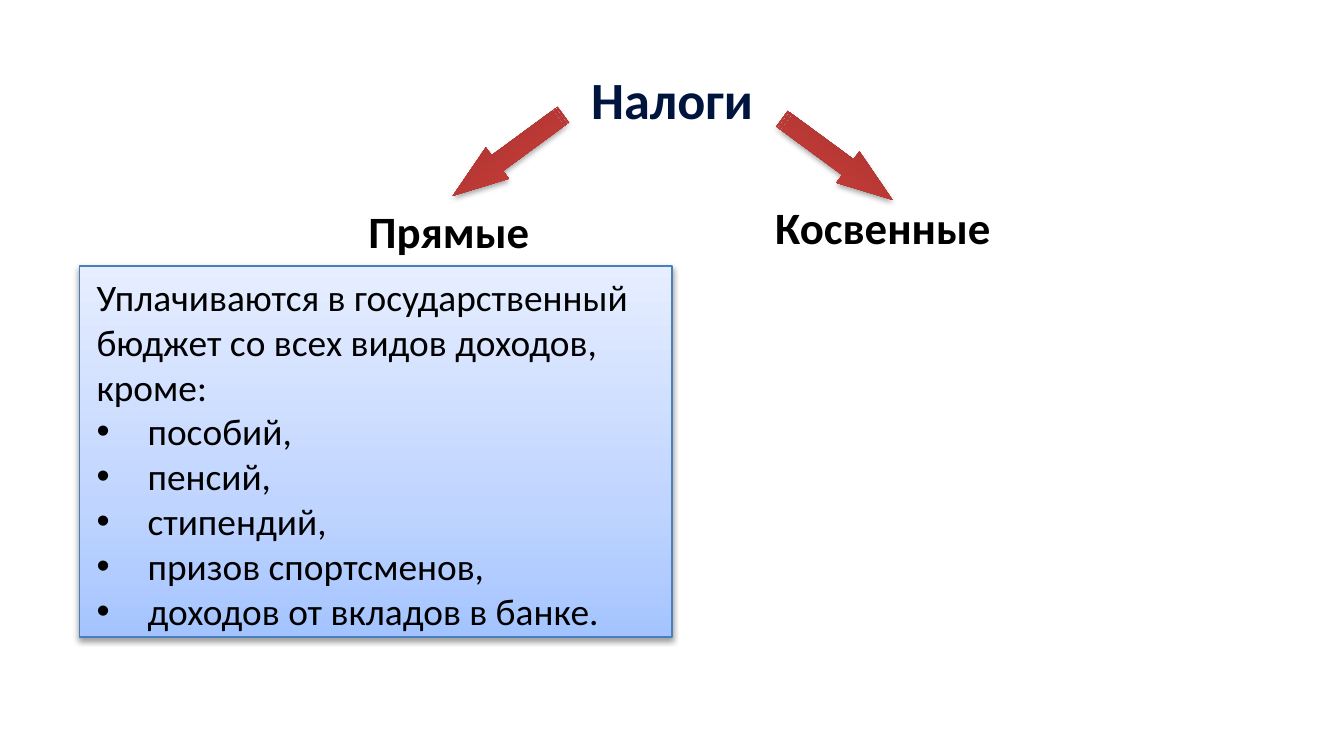
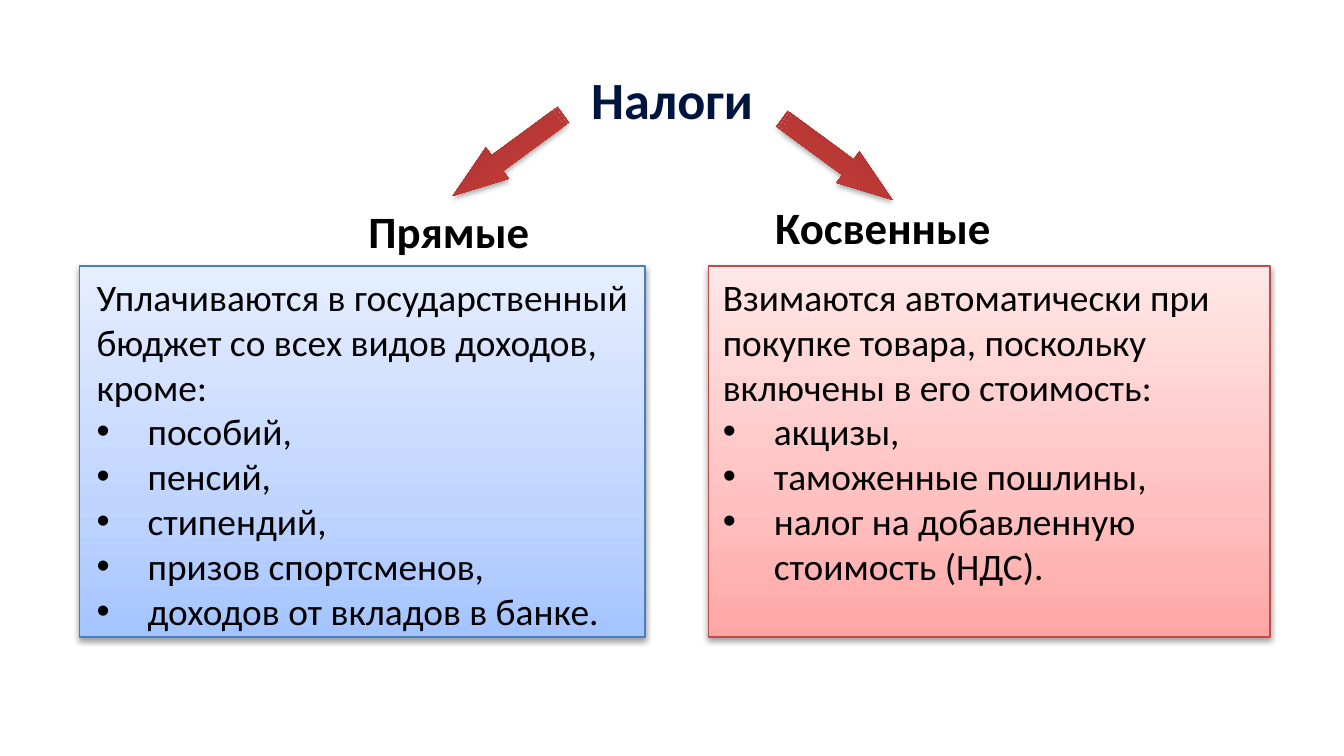
from lxml.etree import SubElement
from pptx import Presentation
from pptx.dml.color import RGBColor
from pptx.enum.shapes import MSO_SHAPE as Shape
from pptx.enum.text import MSO_AUTO_SIZE as AutoSize, PP_ALIGN as Align
from pptx.oxml.ns import qn
from pptx.util import Inches, Pt

COLORS = {
    "title": "00153E",
    "text": "000000",
    "shadow": "000000",
    "direct_line": "4B7EBC",
    "indirect_line": "BF4C48",
}
# Gradient stops run from bottom to top: percent, colour
GRADIENTS = {
    "arrow": [(0, "9C2F2D"), (80, "CB3E3A"), (100, "CE3B37")],
    "direct": [(0, "A4C4FF"), (35, "BFD4FF"), (100, "E6EEFF")],
    "indirect": [(0, "FFA6A5"), (35, "FFC0BF"), (100, "FFE7E7")],
}
FORMATS = {
    "title": {"name": "Calibri", "size": Pt(28), "bold": True},
    "heading": {"name": "Calibri", "size": Pt(24), "bold": True},
    "body": {"name": "Calibri", "size": Pt(20), "bold": False},
}
BULLET_INDENT = Inches(0.38)
PANEL_TOP, PANEL_HEIGHT = 1.98, 2.76

DIRECT_INTRO = ["Уплачиваются в государственный бюджет со всех видов доходов,", "кроме:"]
DIRECT_ITEMS = ["пособий,", "пенсий,", "стипендий,", "призов спортсменов,",
                "доходов от вкладов в банке."]
INDIRECT_INTRO = ["Взимаются автоматически при покупке товара, "
                  "поскольку включены в его стоимость:"]
INDIRECT_ITEMS = ["акцизы,", "таможенные пошлины,", "налог на добавленную стоимость (НДС)."]


def inches(*lengths):
    return [Inches(length) for length in lengths]


def add_color(parent, value):
    return SubElement(parent, qn("a:srgbClr"), val=value)


def fill_gradient(shape, stops):
    shape.fill.gradient()
    shape.fill.gradient_angle = 90
    stop_list = shape.element.spPr.find(qn("a:gradFill")).find(qn("a:gsLst"))
    for stop in list(stop_list):
        stop_list.remove(stop)
    for percent, value in stops:
        add_color(SubElement(stop_list, qn("a:gs"), pos=str(percent * 1000)), value)


def drop_shadow(shape, opacity, distance):
    shape.shadow.inherit = False
    effects = shape.element.spPr.find(qn("a:effectLst"))
    shadow = SubElement(effects, qn("a:outerShdw"), blurRad=str(Pt(3.1)),
                        dist=str(Pt(distance)), dir="5400000", rotWithShape="0")
    SubElement(add_color(shadow, COLORS["shadow"]), qn("a:alpha"), val=str(opacity * 1000))


def add_bullet(paragraph):
    properties = paragraph._p.get_or_add_pPr()
    properties.set("marL", str(BULLET_INDENT))
    properties.set("indent", str(-BULLET_INDENT))
    SubElement(properties, qn("a:buFont"), typeface="Arial")
    SubElement(properties, qn("a:buChar"), char="•")


def add_text(slide, box, lines, style, color="text", align=Align.CENTER, items=()):
    frame = slide.shapes.add_textbox(*inches(*box)).text_frame
    frame.word_wrap = True
    frame.auto_size = AutoSize.SHAPE_TO_FIT_TEXT
    for index, line in enumerate([*lines, *items]):
        paragraph = frame.add_paragraph() if index else frame.paragraphs[0]
        paragraph.alignment = align
        if index >= len(lines):
            add_bullet(paragraph)
        run = paragraph.add_run()
        run.text = line
        for name, value in FORMATS[style].items():
            setattr(run.font, name, value)
        run.font.color.rgb = RGBColor.from_string(COLORS[color])


def add_arrow(slide, left, top, rotation, mirrored=False):
    arrow = slide.shapes.add_shape(Shape.STRIPED_RIGHT_ARROW, *inches(left, top, 1.02, 0.29))
    arrow.adjustments[0], arrow.adjustments[1] = 0.5, 1.42
    arrow.rotation = rotation
    if mirrored:
        arrow.element.spPr.xfrm.set("flipH", "1")
    fill_gradient(arrow, GRADIENTS["arrow"])
    arrow.line.fill.background()
    drop_shadow(arrow, 35, 1.8)


def add_panel(slide, kind, left, width, text_box, intro, items):
    panel = slide.shapes.add_shape(
        Shape.RECTANGLE, *inches(left, PANEL_TOP, width, PANEL_HEIGHT))
    fill_gradient(panel, GRADIENTS[kind])
    panel.line.color.rgb = RGBColor.from_string(COLORS[kind + "_line"])
    panel.line.width = Pt(0.75)
    drop_shadow(panel, 38, 1.6)
    add_text(slide, text_box, intro, "body", align=Align.LEFT, items=items)


def add_tax_slide(deck, direct_width):
    """Slide with the title, both branches and the panel on direct taxes."""
    slide = deck.slides.add_slide(deck.slide_layouts[6])
    add_text(slide, (2.64, 0.45, 4.72, 0.57), ["Налоги"], "title", "title")
    # Branches
    add_arrow(slide, 3.27, 1.01, 143.7)
    add_arrow(slide, 5.72, 1.04, 216.3, mirrored=True)
    add_text(slide, (2.24, 1.47, 2.2, 0.5), ["Прямые"], "heading")
    add_text(slide, (5.47, 1.44, 2.2, 0.5), ["Косвенные"], "heading")
    # Direct taxes
    add_panel(slide, "direct", 0.59, direct_width, (0.62, 1.99, 4.17, 2.79),
              DIRECT_INTRO, DIRECT_ITEMS)
    return slide


def main():
    deck = Presentation()
    # Widescreen, 16:9
    deck.slide_width = Inches(10)
    deck.slide_height = deck.slide_width * 9 // 16

    add_tax_slide(deck, direct_width=4.41)

    # Second slide adds indirect taxes
    both_taxes = add_tax_slide(deck, direct_width=4.21)
    add_panel(both_taxes, "indirect", 5.27, 4.18, (5.28, 1.99, 4.17, 2.46),
              INDIRECT_INTRO, INDIRECT_ITEMS)

    deck.save("out.pptx")


if __name__ == "__main__":
    main()
